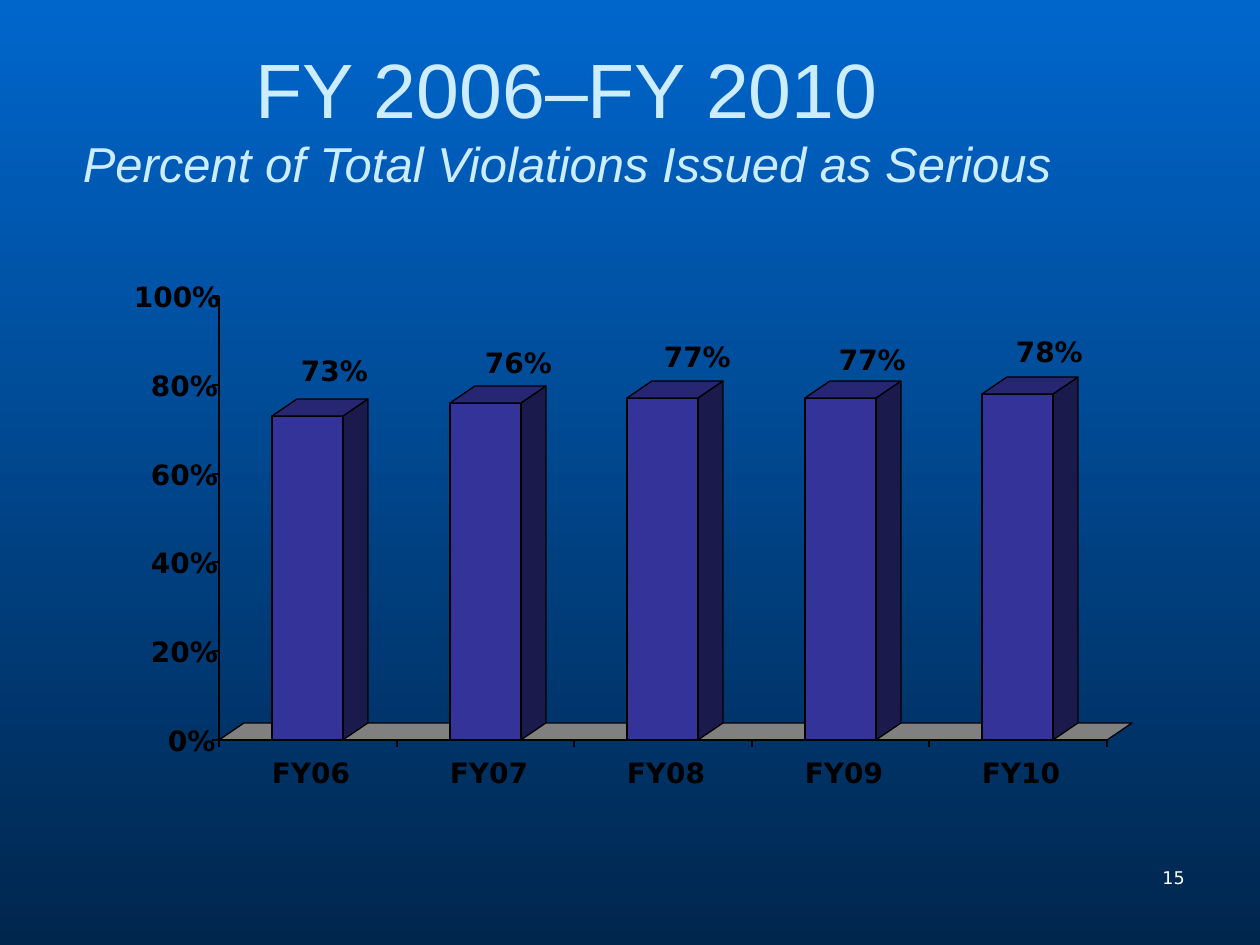
from dataclasses import dataclass
from lxml.etree import SubElement
from pptx import Presentation
from pptx.dml.color import RGBColor as Rgb
from pptx.enum.shapes import MSO_CONNECTOR as Conn, MSO_SHAPE as Kind
from pptx.enum.text import MSO_ANCHOR as Anchor, MSO_AUTO_SIZE as Auto, PP_ALIGN as Align
from pptx.oxml.ns import qn
from pptx.util import Pt

PX = 7257  # EMU per px, at 126 px to the inch


@dataclass(frozen=True)
class Theme:
    sky: str = "0066CC"
    deep: str = "00264D"
    title: str = "CCECFF"
    white: str = "FFFFFF"
    ink: str = "000000"
    front: str = "333399"
    side: str = "1A1A4D"
    top: str = "262673"
    floor: str = "808080"
    head: str = "Arial"
    body: str = "DejaVu Sans"
    big: int = 44
    sub: int = 28
    label: int = 16
    page: int = 10
    rule: float = 0.75


T = Theme()

# Plot area: x of the axis, y of 0%, height of 100%, width of a category
LEFT, BASE, HIGH, STEP = 219, 740, 444, 177.6
INSET, WIDE, DEEP, RISE = 53, 71, 25, 17

# Year, percent, and place of the value label
BARS = [
    ("FY06", 73, 301, 354),
    ("FY07", 76, 485, 346),
    ("FY08", 77, 664, 340),
    ("FY09", 77, 839, 343),
    ("FY10", 78, 1016, 335),
]


def emu(*vals):
    return [round(v) * PX for v in vals]


def level(pct):
    return BASE - HIGH * pct / 100


def put(obj, **vals):
    for key, val in vals.items():
        setattr(obj, key, val)


def style(run, size, face, color, **more):
    put(run.font, size=Pt(size), name=face, **more)
    run.font.color.rgb = Rgb.from_string(color)


def edge(line):
    line.color.rgb = Rgb.from_string(T.ink)
    line.width = Pt(T.rule)


def paint(shape, color):
    shape.shadow.inherit = False
    shape.fill.solid()
    shape.fill.fore_color.rgb = Rgb.from_string(color)
    edge(shape.line)


def face(shapes, color, *pts):
    first, *rest = [emu(*pt) for pt in pts]
    form = shapes.build_freeform(*first, scale=1.0)
    form.add_line_segments(rest, close=True)
    paint(form.convert_to_shape(), color)


def rule(shapes, *ends):
    line = shapes.add_connector(Conn.STRAIGHT, *emu(*ends))
    edge(line.line)
    SubElement(line._element.spPr, qn("a:effectLst"))


def box(shapes, x, y, w, h, **vals):
    frame = shapes.add_textbox(*emu(x, y, w, h)).text_frame
    put(frame, **vals)
    return frame


def label(shapes, text, x, y, w):
    frame = box(shapes, x, y, w, 42, word_wrap=False,
                auto_size=Auto.SHAPE_TO_FIT_TEXT, margin_left=0,
                margin_right=0, margin_top=0, margin_bottom=0)
    run = frame.paragraphs[0].add_run()
    run.text = text
    style(run, T.label, T.body, T.ink, bold=True)


def bar(shapes, x, pct):
    y, end = level(pct), x + WIDE
    face(shapes, T.side, (end, BASE), (end, y),
         (end + DEEP, y - RISE), (end + DEEP, BASE - RISE))
    paint(shapes.add_shape(Kind.RECTANGLE, *emu(x, y, WIDE, BASE - y)), T.front)
    face(shapes, T.top, (end, y), (end + DEEP, y - RISE),
         (x + DEEP, y - RISE), (x, y))


def plot(shapes):
    end = LEFT + STEP * len(BARS)
    # Floor
    face(shapes, T.floor, (LEFT, BASE), (LEFT + DEEP, BASE - RISE),
         (end + DEEP, BASE - RISE), (end, BASE))
    # Bars with value and year
    for i, (year, pct, x, y) in enumerate(BARS):
        start = LEFT + INSET + i * STEP
        bar(shapes, start, pct)
        label(shapes, f"{pct}%", x, y, 78)
        label(shapes, year, start, 756, 91)
    # Value axis
    rule(shapes, LEFT, BASE, LEFT, level(100))
    for pct in range(0, 101, 20):
        y, text = level(pct), f"{pct}%"
        extra = len(text) - 2
        rule(shapes, LEFT, y, LEFT - 7, y)
        label(shapes, text, 168 - 17 * extra, y - 16, 60 + 18 * extra)
    # Year axis
    rule(shapes, LEFT, BASE, end, BASE)
    for i in range(len(BARS) + 1):
        x = LEFT + i * STEP
        rule(shapes, x, BASE, x, BASE + 7)


def title(shapes):
    frame = box(shapes, 0, 38, 1134, 158, word_wrap=True,
                vertical_anchor=Anchor.MIDDLE)
    para = frame.paragraphs[0]
    para.alignment = Align.CENTER
    run = para.add_run()
    run.text = "FY 2006–FY 2010"
    style(run, T.big, T.head, T.title)
    para.add_line_break()
    run = para.add_run()
    run.text = "Percent of Total Violations Issued as Serious"
    style(run, T.sub, T.head, T.title, italic=True)


def page(shapes):
    para = box(shapes, 903, 861, 294, 63, word_wrap=True).paragraphs[0]
    para.alignment = Align.RIGHT
    run = para.add_run()
    run.text = "15"
    style(run, T.page, T.body, T.white)


def back(slide):
    fill = slide.background.fill
    fill.gradient()
    fill.gradient_angle = 270
    for stop, color in zip(fill.gradient_stops, (T.sky, T.deep)):
        stop.color.rgb = Rgb.from_string(color)


def main():
    deck = Presentation()
    wide, high = emu(1260, 945)
    put(deck, slide_width=wide, slide_height=high)
    slide = deck.slides.add_slide(deck.slide_layouts[6])
    back(slide)
    page(slide.shapes)
    title(slide.shapes)
    plot(slide.shapes.add_group_shape().shapes)
    deck.save("out.pptx")


if __name__ == "__main__":
    main()
